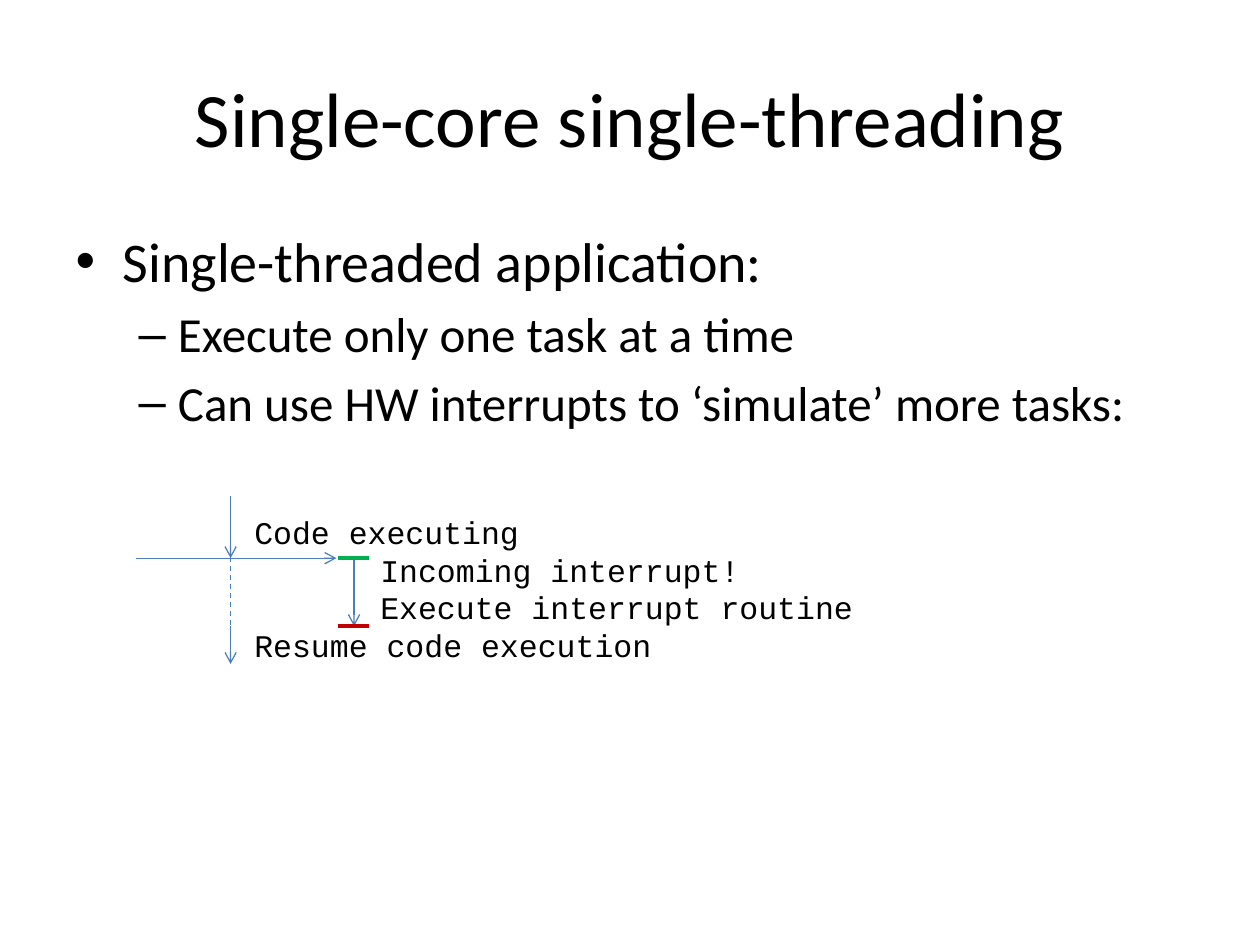
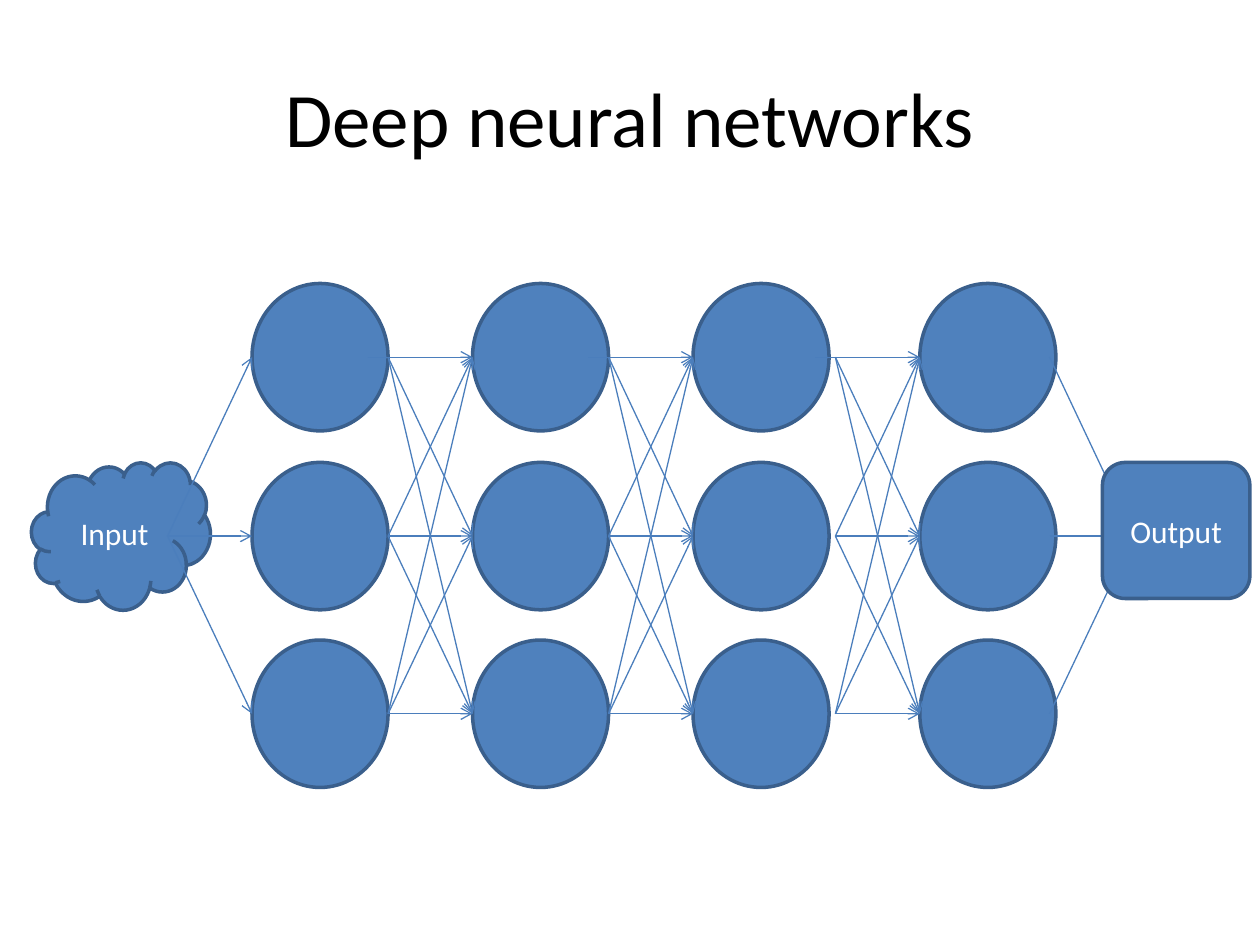
from itertools import product

from lxml.etree import SubElement
from pptx import Presentation
from pptx.dml.color import RGBColor
from pptx.enum.dml import MSO_LINE
from pptx.enum.shapes import MSO_CONNECTOR, MSO_SHAPE
from pptx.enum.text import MSO_ANCHOR, PP_ALIGN
from pptx.oxml.ns import qn
from pptx.util import Inches, Pt


def rgb(value):
    return RGBColor.from_string(value)


class Deck:
    BLACK, WHITE = "000000", "FFFFFF"
    FILL, EDGE, WIRE = "4F81BD", "3A5F8C", "4B7EBC"
    GREEN, RED = "00B050", "C00000"
    TITLE = {"name": "Calibri", "size": Pt(44)}
    LEVELS = [{"name": "Calibri", "size": Pt(32)},
              {"name": "Calibri", "size": Pt(28)}]
    LABEL = {"name": "Calibri", "size": Pt(18)}
    CODE = {"name": "Courier New", "size": Pt(18)}
    TAB = Inches(1)

    def __init__(self):
        self.prs = Presentation()
        self.prs.slide_width, self.prs.slide_height = Inches(10), Inches(7.5)
        self.s = None

    def place(self, sp, box):
        for name, value in zip(("left", "top", "width", "height"), box):
            setattr(sp, name, Inches(value))

    def style(self, p, font, color):
        for r in p.runs:
            for name, value in font.items():
                setattr(r.font, name, value)
            r.font.color.rgb = rgb(color)

    def slide(self, title, layout="Title Only"):
        self.s = self.prs.slides.add_slide(
            self.prs.slide_layouts.get_by_name(layout))
        sp = self.s.shapes.title
        self.place(sp, (0.5, 0.3, 9, 1.25))
        tf = sp.text_frame
        tf.text = title
        tf.vertical_anchor = MSO_ANCHOR.MIDDLE
        p = tf.paragraphs[0]
        p.alignment = PP_ALIGN.CENTER
        self.style(p, self.TITLE, self.BLACK)

    def bullets(self, items):
        sp = self.s.placeholders[1]
        self.place(sp, (0.5, 1.75, 9, 4.95))
        tf = sp.text_frame
        tf.text = "\n".join(text for _, text in items)
        for p, (level, _) in zip(tf.paragraphs, items):
            p.level = level
            self.style(p, self.LEVELS[level], self.BLACK)

    def text(self, box, lines):
        sp = self.s.shapes.add_textbox(*map(Inches, box))
        tf = sp.text_frame
        tf.word_wrap = True
        tf.text = "\n".join(lines)
        for p in tf.paragraphs:
            self.style(p, self.CODE, self.BLACK)
            tabs = SubElement(p._p.get_or_add_pPr(), qn("a:tabLst"))
            SubElement(tabs, qn("a:tab"), pos=str(int(self.TAB)), algn="l")

    def shape(self, kind, box, label=""):
        sp = self.s.shapes.add_shape(kind, *map(Inches, box))
        sp.shadow.inherit = False
        sp.fill.solid()
        sp.fill.fore_color.rgb = rgb(self.FILL)
        sp.line.color.rgb = rgb(self.EDGE)
        sp.line.width = Pt(2)
        if label:
            tf = sp.text_frame
            tf.text = label
            tf.vertical_anchor = MSO_ANCHOR.MIDDLE
            p = tf.paragraphs[0]
            p.alignment = PP_ALIGN.CENTER
            self.style(p, self.LABEL, self.WHITE)

    def line(self, start, end, color=WIRE, width=0.75, dash=None):
        cxn = self.s.shapes.add_connector(
            MSO_CONNECTOR.STRAIGHT, *map(Inches, (*start, *end)))
        cxn.line.color.rgb = rgb(color)
        cxn.line.width = Pt(width)
        if dash:
            cxn.line.dash_style = dash
        SubElement(cxn._element.spPr, qn("a:effectLst"))
        return cxn

    def arrow(self, start, end):
        ln = self.line(start, end).line._get_or_add_ln()
        SubElement(ln, qn("a:tailEnd"), type="arrow")


def threading_slide(deck):
    deck.slide("Single-core single-threading", "Title and Content")
    deck.bullets([
        (0, "Single-threaded application:"),
        (1, "Execute only one task at a time"),
        (1, "Can use HW interrupts to ‘simulate’ more tasks:"),
    ])
    main_x, routine_x = 1.83, 2.81
    begin_y, end_y = 4.43, 4.97
    deck.arrow((main_x, 3.94), (main_x, begin_y))
    deck.arrow((1.08, begin_y), (2.67, begin_y))
    deck.arrow((routine_x, begin_y), (routine_x, end_y))
    deck.line((main_x, 4.35), (main_x, 5.1), dash=MSO_LINE.DASH)
    deck.arrow((main_x, end_y), (main_x, 5.27))
    deck.text((1.92, 4.02, 5.17, 1.31), [
        "Code executing",
        "\tIncoming interrupt!",
        "\tExecute interrupt routine",
        "Resume code execution",
    ])
    for y, color in ((end_y, deck.RED), (begin_y, deck.GREEN)):
        deck.line((2.68, y), (2.93, y), color, 2.25)


def network_slide(deck):
    deck.slide("Deep neural networks")
    layers = [2, 3.75, 5.5, 7.3]
    node_w, node_h, gap = 1.08, 1.17, 0.67
    tops = [2.25, 3.67, 5.08]
    mids = [top + node_h / 2 for top in tops]
    centre = mids[1]

    for i, x in enumerate(layers):
        for top in tops:
            deck.shape(MSO_SHAPE.OVAL, (x, top, node_w, node_h))
        if i == 0:
            continue
        for y1, y2 in product(mids, mids):
            lead = 0.16 if y1 == y2 == mids[0] else 0
            deck.arrow((x - gap - lead, y1), (x, y2))

    deck.shape(MSO_SHAPE.CLOUD, (0.25, tops[1], 1.42, node_h), "Input")
    for y in mids:
        deck.arrow((layers[0] - gap, centre), (layers[0], y))
    for y in mids:
        deck.arrow((9 - gap, y), (9, centre))
    deck.shape(MSO_SHAPE.ROUNDED_RECTANGLE,
               (8.75, tops[1], node_h, node_w), "Output")


def main():
    deck = Deck()
    threading_slide(deck)
    network_slide(deck)
    deck.prs.save("out.pptx")


if __name__ == "__main__":
    main()
